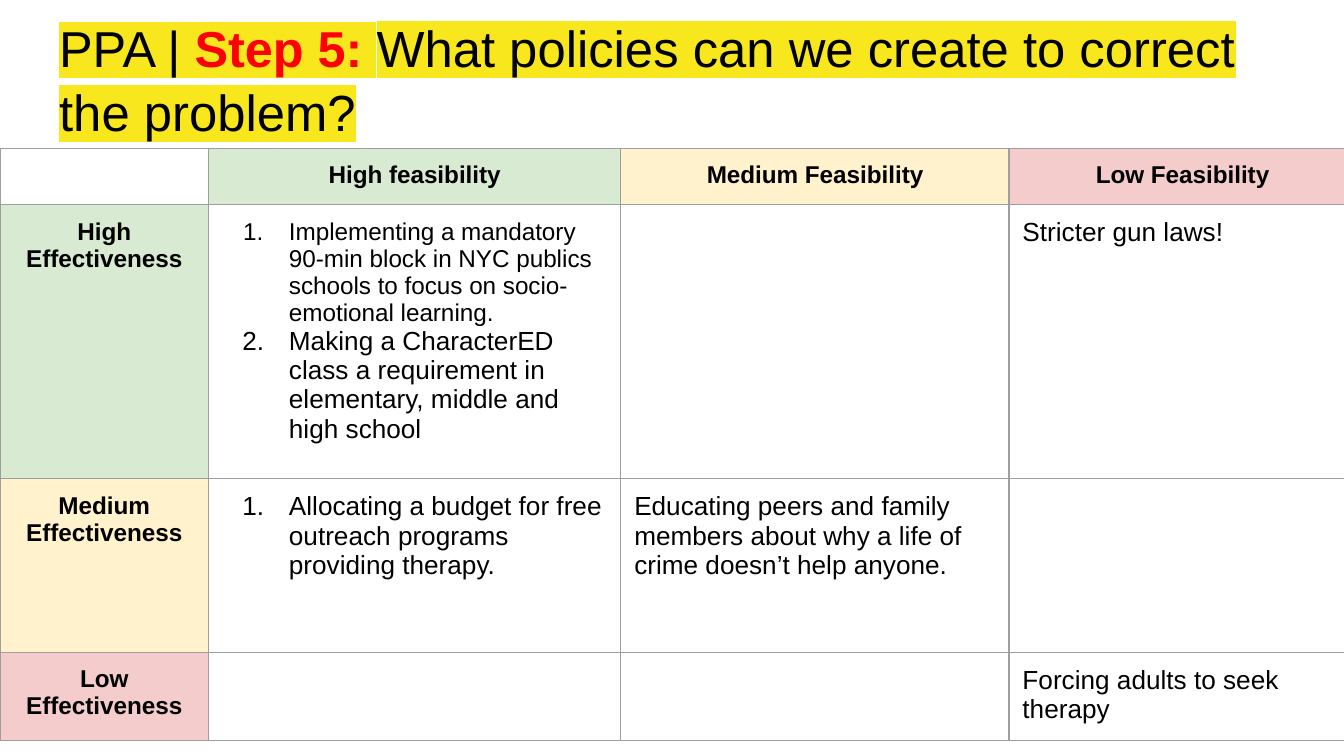
"""Build the policy slide: a highlighted title above a feasibility and effectiveness matrix."""
from dataclasses import dataclass
from typing import Any

from lxml import etree
from pptx import Presentation
from pptx import util as u
from pptx.dml import color as c
from pptx.enum import text as t
from pptx.oxml import ns


@dataclass(frozen=True)
class Theme:
    font: str = "Arial"
    ink: str = "000000"
    accent: str = "FF0000"
    highlight: str = "F8E71C"
    border: str = "9E9E9E"
    high: str = "D9EAD3"
    medium: str = "FFF2CC"
    low: str = "F4CCCC"
    title_size: float = 27
    question_size: float = 27.2
    label_size: float = 13
    body_size: float = 14
    inset: float = 7.2
    border_width: float = 0.75


@dataclass(frozen=True)
class TitleRun:
    words: str
    size: float
    colour: str
    bold: bool = False


@dataclass(frozen=True)
class Line:
    words: str
    size: float
    bold: bool = False
    centred: bool = False
    hanging: float = 0


@dataclass(frozen=True)
class Entry:
    row: int
    column: int
    lines: tuple[Line, ...]
    fill: str = ""


THEME = Theme()
COLUMNS = (111.6, 221, 208, 185.8)
ROWS = (30.24, 146.9, 92.9, 47.5)
LEVEL_FILLS = (THEME.high, THEME.medium, THEME.low)
INSETS = {f"margin_{side}": u.Pt(THEME.inset) for side in ("left", "right", "top", "bottom")}

TITLE = (
    TitleRun("PPA | ", THEME.title_size, THEME.ink),
    TitleRun("Step 5:", THEME.title_size, THEME.accent, True),
    TitleRun(" ", THEME.title_size, THEME.ink),
    TitleRun("What policies can we create to correct the problem?", THEME.question_size, THEME.ink),
)
FEASIBILITY = ("High feasibility", "Medium Feasibility", "Low Feasibility")
EFFECTIVENESS = ("High Effectiveness", "Medium Effectiveness", "Low Effectiveness")
POLICIES = (
    Entry(1, 1, (
        Line("Implementing a mandatory 90-min block in NYC publics schools to focus on "
             "socio-emotional learning.", THEME.label_size, hanging=24.5),
        Line("Making a CharacterED class a requirement in elementary, middle and high school",
             THEME.body_size, hanging=25),
    )),
    Entry(1, 3, (Line("Stricter gun laws!", THEME.body_size),)),
    Entry(2, 1, (Line("Allocating a budget for free outreach programs providing therapy.",
                      THEME.body_size, hanging=25),)),
    Entry(2, 2, (Line("Educating peers and family members about why a life of crime "
                      "doesn’t help anyone.", THEME.body_size),)),
    Entry(3, 3, (Line("Forcing adults to seek therapy", THEME.body_size),)),
)


def apply(target: Any, values: dict[str, Any]) -> None:
    """Set each named attribute on the target."""
    for name, value in values.items():
        setattr(target, name, value)


def add_colour(parent: Any, tag: str, colour: str) -> Any:
    """Append a colour-holding element to the parent."""
    holder = etree.SubElement(parent, ns.qn(tag))
    etree.SubElement(holder, ns.qn("a:srgbClr"), val=colour)
    return holder


def add_run(paragraph: Any, words: str, size: float, colour: str, bold: bool) -> Any:
    """Add a formatted run to the paragraph."""
    run = paragraph.add_run()
    run.text = words
    apply(run.font, {"size": u.Pt(size), "bold": bold, "name": THEME.font})
    run.font.color.rgb = c.RGBColor.from_string(colour)
    return run


def number_paragraph(paragraph: Any, hanging: float) -> None:
    """Make the paragraph a numbered item with a hanging indent."""
    properties = paragraph._p.get_or_add_pPr()
    properties.set("marL", str(u.Pt(36)))
    properties.set("indent", str(-u.Pt(hanging)))
    add_colour(properties, "a:buClr", THEME.ink)
    etree.SubElement(properties, ns.qn("a:buFont"), typeface=THEME.font)
    etree.SubElement(properties, ns.qn("a:buAutoNum"), type="arabicPeriod")


def draw_title(slide: Any) -> None:
    """Place the title and write its highlighted runs."""
    title = slide.shapes.title
    apply(title, {"left": u.Pt(24.5), "top": u.Pt(0), "width": u.Pt(671), "height": u.Pt(45.4)})
    frame = title.text_frame
    apply(frame, INSETS | {"word_wrap": True, "auto_size": t.MSO_AUTO_SIZE.NONE,
                           "vertical_anchor": t.MSO_ANCHOR.TOP})
    paragraph = frame.paragraphs[0]
    apply(paragraph, {"alignment": t.PP_ALIGN.LEFT, "line_spacing": 1.05,
                      "space_before": u.Pt(0)})
    for item in TITLE:
        run = add_run(paragraph, item.words, item.size, item.colour, item.bold)
        properties = run._r.get_or_add_rPr()
        highlight = add_colour(properties, "a:highlight", THEME.highlight)
        properties.find(ns.qn("a:solidFill")).addnext(highlight)


def outline_cell(cell: Any) -> None:
    """Give the cell a thin border on every side."""
    properties = cell._tc.get_or_add_tcPr()
    for position, side in enumerate(("L", "R", "T", "B")):
        line = etree.Element(ns.qn(f"a:ln{side}"), w=str(u.Pt(THEME.border_width)))
        add_colour(line, "a:solidFill", THEME.border)
        properties.insert(position, line)


def fill_entry(table: Any, entry: Entry) -> None:
    """Write an entry's paragraphs and colour into its cell."""
    cell = table.cell(entry.row, entry.column)
    apply(cell, INSETS)
    if entry.fill:
        cell.fill.solid()
        cell.fill.fore_color.rgb = c.RGBColor.from_string(entry.fill)
    for index, line in enumerate(entry.lines):
        frame = cell.text_frame
        paragraph = frame.add_paragraph() if index else frame.paragraphs[0]
        paragraph.alignment = t.PP_ALIGN.CENTER if line.centred else t.PP_ALIGN.LEFT
        if line.hanging:
            number_paragraph(paragraph, line.hanging)
        add_run(paragraph, line.words, line.size, THEME.ink, line.bold)


def header(row: int, column: int, words: str, fill: str) -> Entry:
    """Describe a bold centred heading cell."""
    return Entry(row, column, (Line(words, THEME.label_size, True, True),), fill)


def draw_matrix(slide: Any) -> None:
    """Draw the table with its headings and policies."""
    frame = slide.shapes.add_table(len(ROWS), len(COLUMNS), u.Pt(0), u.Pt(79.4),
                                   u.Pt(sum(COLUMNS)), u.Pt(sum(ROWS)))
    table = frame.table
    apply(table, {"first_row": False, "horz_banding": False})
    for column, width in zip(table.columns, COLUMNS):
        column.width = u.Pt(width)
    for row, height in zip(table.rows, ROWS):
        row.height = u.Pt(height)
    for cell in table.iter_cells():
        cell.fill.background()
    for level, fill in enumerate(LEVEL_FILLS):
        fill_entry(table, header(0, level + 1, FEASIBILITY[level], fill))
        fill_entry(table, header(level + 1, 0, EFFECTIVENESS[level], fill))
    for policy in POLICIES:
        fill_entry(table, policy)
    for cell in table.iter_cells():
        outline_cell(cell)


def main() -> None:
    """Build and save the presentation."""
    presentation = Presentation()
    apply(presentation, {"slide_width": u.Pt(720), "slide_height": u.Pt(405)})
    slide = presentation.slides.add_slide(presentation.slide_layouts[5])
    draw_title(slide)
    draw_matrix(slide)
    presentation.save("out.pptx")


if __name__ == "__main__":
    main()
